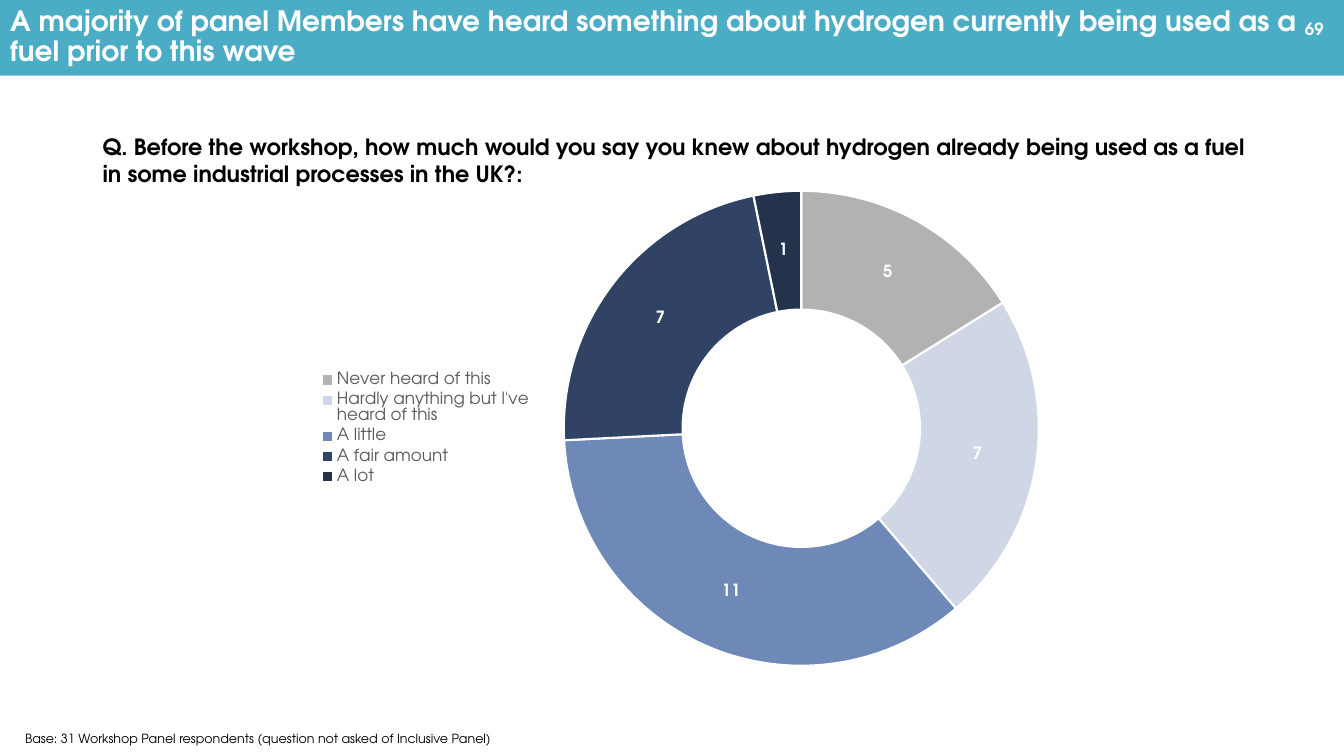
from pptx import Presentation
from pptx.chart.data import CategoryChartData
from pptx.dml.color import RGBColor
from pptx.enum import chart as ch, text
from pptx.oxml import parse_xml
from pptx.oxml.ns import nsdecls, qn
from pptx.util import Pt

FONT = "TeX Gyre Adventor"
COLORS = {
    "band": "4BACC6",
    "white": "FFFFFF",
    "black": "000000",
    "legend": "595959",
    "Never heard of this": "B2B2B2",
    "Hardly anything but I've heard of this": "CFD7E7",
    "A little": "6E88B8",
    "A fair amount": "314364",
    "A lot": "25324B",
}
ANSWERS = {
    "Never heard of this": 5,
    "Hardly anything but I've heard of this": 7,
    "A little": 11,
    "A fair amount": 7,
    "A lot": 1,
}


def set_font(font, size, color, bold=False):
    font.name = FONT
    font.size = Pt(size)
    font.bold = bold
    font.color.rgb = RGBColor.from_string(COLORS[color])


def write(sp, words, box, size, color="black", bold=False,
          align=text.PP_ALIGN.LEFT, spacing=1.0):
    sp.left, sp.top, sp.width, sp.height = [Pt(n) for n in box]
    tf = sp.text_frame
    tf.word_wrap = True
    tf.auto_size = text.MSO_AUTO_SIZE.NONE
    tf.vertical_anchor = text.MSO_ANCHOR.MIDDLE
    p = tf.paragraphs[0]
    p.alignment = align
    p.line_spacing = spacing
    r = p.add_run()
    r.text = words
    set_font(r.font, size, color, bold)


prs = Presentation()
prs.slide_width, prs.slide_height = Pt(960), Pt(540)
s = prs.slides.add_slide(prs.slide_layouts[5])

title = s.shapes.title
title.fill.solid()
title.fill.fore_color.rgb = RGBColor.from_string(COLORS["band"])
write(title, "A majority of panel Members have heard something about hydrogen "
      "currently being used as a fuel prior to this wave",
      (0, 0, 960, 54), 20, color="white", bold=True, spacing=0.9)

labels = [
    ("69", (905.8, 4.3, 46.8, 32.4),
     dict(size=12, color="white", bold=True, align=text.PP_ALIGN.RIGHT)),
    ("Base: 31 Workshop Panel respondents (question not asked of Inclusive Panel)",
     (10.8, 515.5, 608.4, 24.5), dict(size=9)),
    ("Q. Before the workshop, how much would you say you knew about hydrogen "
     "already being used as a fuel in some industrial processes in the UK?:",
     (66.2, 102.2, 847.4, 23.8), dict(size=16, bold=True)),
]
for words, box, style in labels:
    write(s.shapes.add_textbox(0, 0, 0, 0), words, box, **style)

data = CategoryChartData(number_format="0")
data.categories = list(ANSWERS)
data.add_series("Series 1", list(ANSWERS.values()))
chart = s.shapes.add_chart(ch.XL_CHART_TYPE.DOUGHNUT, Pt(216.7), Pt(125.3),
                           Pt(547.2), Pt(361.4), data).chart
set_font(chart.font, 10, "black")
chart.has_title = False
chart.has_legend = True
legend = chart.legend
legend.position = ch.XL_LEGEND_POSITION.LEFT
legend.include_in_layout = False
set_font(legend.font, 12, "legend")

plot = chart.plots[0]
plot.vary_by_categories = True
plot.has_data_labels = True
dl = plot.data_labels
dl.show_value = True
dl.show_percentage = False
dl.number_format = "0"
dl.number_format_is_linked = False
set_font(dl.font, 12, "white", bold=True)

for i, answer in enumerate(ANSWERS):
    fmt = plot.series[0].points[i].format
    fmt.fill.solid()
    fmt.fill.fore_color.rgb = RGBColor.from_string(COLORS[answer])
    fmt.line.color.rgb = RGBColor.from_string(COLORS["white"])
    fmt.line.width = Pt(1.5)

area = chart.element.find(".//" + qn("c:plotArea"))
area.find(".//" + qn("c:holeSize")).set("val", "65")
layouts = [
    (area, 0, '<c:layoutTarget val="inner"/>', (0.34, 0.03, 0.62, 0.94)),
    (chart.element.find(".//" + qn("c:legend")), 1, "", (0.01, 0.38, 0.3, 0.24)),
]
for parent, index, target, (x, y, w, h) in layouts:
    for old in parent.findall(qn("c:layout")):
        parent.remove(old)
    parent.insert(index, parse_xml(
        f'<c:layout {nsdecls("c")}><c:manualLayout>{target}'
        '<c:xMode val="edge"/><c:yMode val="edge"/>'
        f'<c:x val="{x}"/><c:y val="{y}"/><c:w val="{w}"/><c:h val="{h}"/>'
        '</c:manualLayout></c:layout>'))

prs.save("out.pptx")
